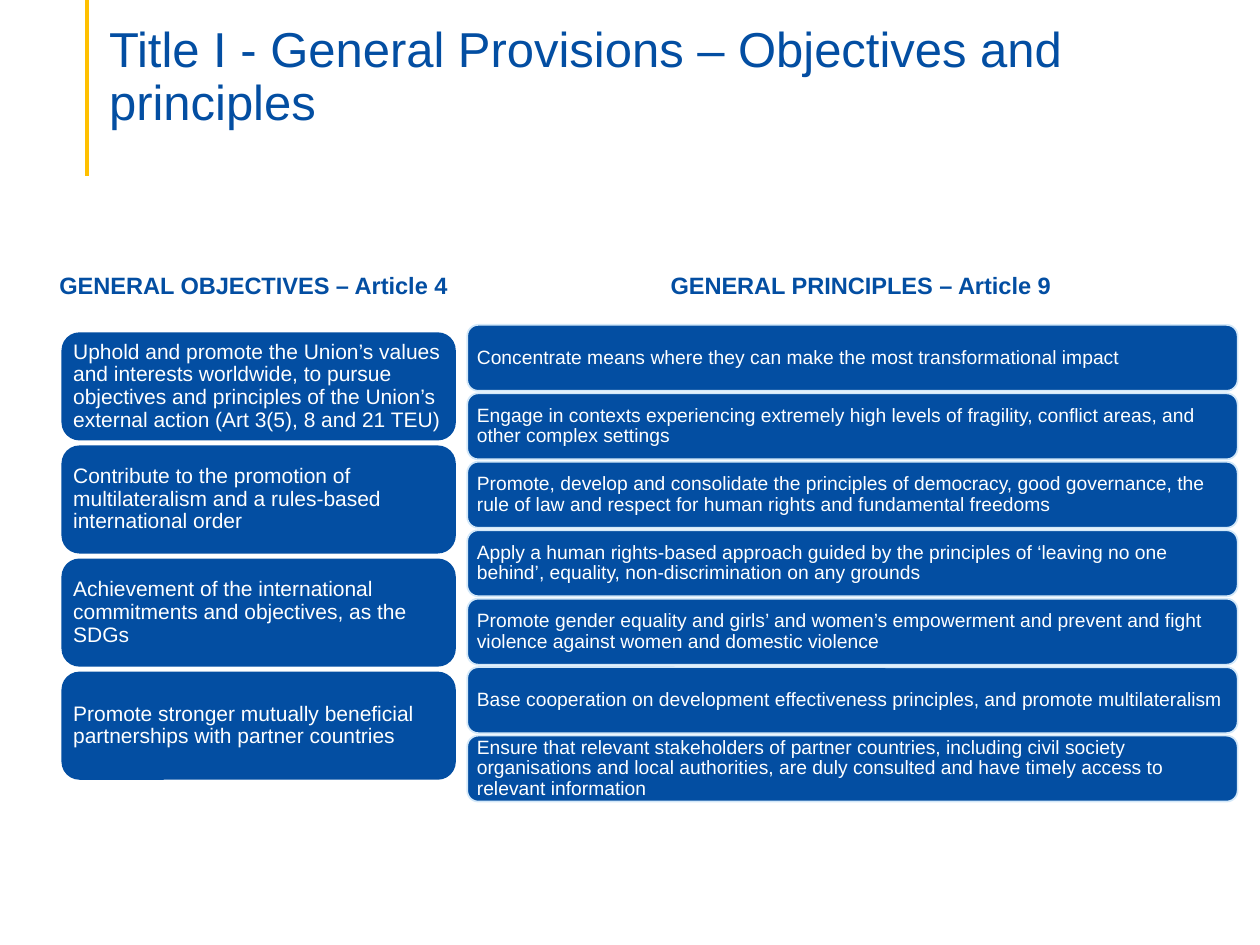
from pptx import Presentation
from pptx.util import Cm, Pt
from pptx.dml.color import RGBColor as Rgb
from pptx.enum.shapes import MSO_SHAPE as Shape, MSO_CONNECTOR as Link
from pptx.enum.text import MSO_ANCHOR as Anchor, PP_ALIGN as Align
from pptx.oxml.ns import qn
from lxml.etree import SubElement

THEME = {
    "font": "Arial",
    "blue": Rgb.from_string("034EA2"),
    "gold": Rgb.from_string("FFC000"),
    "pale": Rgb.from_string("D3E8F9"),
    "white": Rgb.from_string("FFFFFF"),
    "title": 28,
    "head": 13.5,
}

TITLE = "Title I - General Provisions – Objectives and principles"

COLUMNS = [
    {
        "head": "GENERAL OBJECTIVES – Article 4",
        "spot": (1.02, 5.08, 8.41, 1.04),
        "first": (1.24, 6.7, 7.95, 2.18),
        "pitch": 2.28,
        "size": 12,
        "edge": None,
        "items": [
            "Uphold and promote the Union’s values and interests worldwide, to pursue objectives and principles of the Union’s external action (Art 3(5), 8 and 21 TEU)",
            "Contribute to the promotion of multilateralism and a rules-based international order",
            "Achievement of the international commitments and objectives, as the SDGs",
            "Promote stronger mutually beneficial partnerships with partner countries",
        ],
    },
    {
        "head": "GENERAL PRINCIPLES – Article 9",
        "spot": (13.34, 5.08, 9.47, 1.04),
        "first": (9.42, 6.55, 15.53, 1.33),
        "pitch": 1.38,
        "size": 11,
        "edge": "pale",
        "items": [
            "Concentrate means where they can make the most transformational impact",
            "Engage in contexts experiencing extremely high levels of fragility, conflict areas, and other complex settings",
            "Promote, develop and consolidate the principles of democracy, good governance, the rule of law and respect for human rights and fundamental freedoms",
            "Apply a human rights-based approach guided by the principles of ‘leaving no one behind’, equality, non-discrimination on any grounds",
            "Promote gender equality and girls’ and women’s empowerment and prevent and fight violence against women and domestic violence",
            "Base cooperation on development effectiveness principles, and promote multilateralism",
            "Ensure that relevant stakeholders of partner countries, including civil society organisations and local authorities, are duly consulted and have timely access to relevant information",
        ],
    },
]


def write(shape, text, size, color, pads, anchor, bold=False, lead=0.9):
    frame = shape.text_frame
    frame.word_wrap = True
    frame.vertical_anchor = anchor
    frame.margin_left, frame.margin_top, frame.margin_right, frame.margin_bottom = map(Cm, pads)
    para = frame.paragraphs[0]
    para.text = text
    para.alignment = Align.LEFT
    para.line_spacing = lead
    font = para.font
    font.name, font.size, font.bold = THEME["font"], Pt(size), bold
    font.color.rgb = THEME[color]


def add_card(slide, box, text, size, edge):
    card = slide.shapes.add_shape(Shape.ROUNDED_RECTANGLE, *map(Cm, box))
    card.shadow.inherit = False
    card.fill.solid()
    card.fill.fore_color.rgb = THEME["blue"]
    if edge:
        card.line.color.rgb = THEME[edge]
        card.line.width = Pt(1)
    else:
        card.line.fill.background()
    write(card, text, size, "white", [0.13] * 4, Anchor.MIDDLE)


def add_column(slide, col):
    head = slide.shapes.add_textbox(*map(Cm, col["spot"]))
    write(head, col["head"], THEME["head"], "blue", (0.18, 0.38, 0.18, 0.1), Anchor.TOP, True, 1.0)
    left, top, width, height = col["first"]
    for row, text in enumerate(col["items"]):
        box = (left, top + row * col["pitch"], width, height)
        add_card(slide, box, text, col["size"], col["edge"])


def main():
    deck = Presentation()
    deck.slide_width, deck.slide_height = Cm(25.4), Cm(19.05)
    slide = deck.slides.add_slide(deck.slide_layouts[6])

    rule = slide.shapes.add_connector(Link.STRAIGHT, Cm(1.75), Cm(0), Cm(1.75), Cm(3.55))
    rule.line.color.rgb = THEME["gold"]
    rule.line.width = Pt(2.25)
    SubElement(rule.element.spPr, qn("a:effectLst"))

    title = slide.shapes.add_textbox(Cm(1.95), Cm(0.46), Cm(21.9), Cm(2.18))
    write(title, TITLE, THEME["title"], "blue", (0.25, 0.13, 0.25, 0), Anchor.BOTTOM)

    for col in COLUMNS:
        add_column(slide, col)
    deck.save("out.pptx")


if __name__ == "__main__":
    main()
